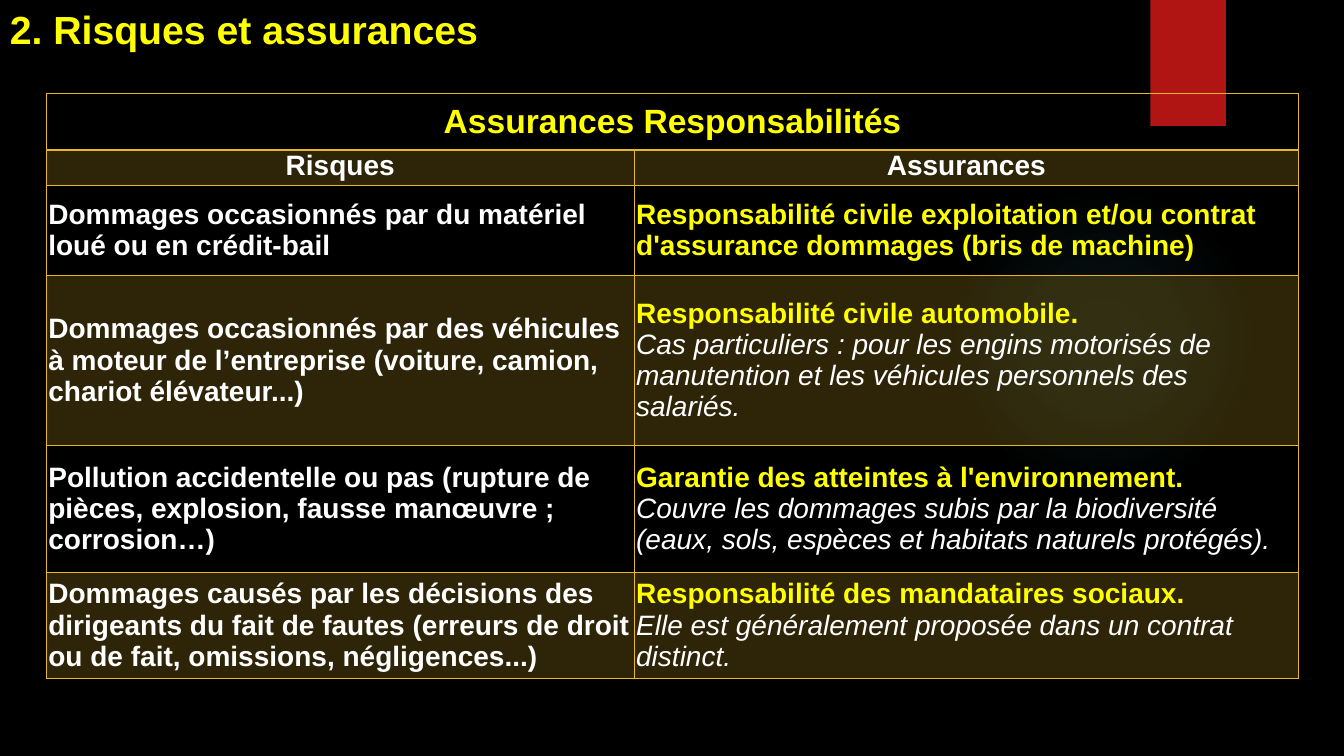
from dataclasses import dataclass

from lxml import etree
from pptx import Presentation
from pptx import util as u
from pptx.dml.color import RGBColor
from pptx.enum import shapes, text
from pptx.oxml import ns


@dataclass(frozen=True)
class Theme:
    font: str = "Arial"
    black: str = "000000"
    white: str = "FFFFFF"
    yellow: str = "FFFF00"
    red: str = "B01513"
    gold: str = "E6B729"
    glow: str = "50B9C1"
    title_size: int = 28
    heading_size: int = 24
    body_size: int = 20
    band_alpha: int = 20


@dataclass(frozen=True)
class Span:
    words: str
    color: str
    size: int
    bold: bool = True
    italic: bool = False


@dataclass(frozen=True)
class Cover:
    risk: str
    insurance: str
    detail: str = ""


THEME = Theme()
COLUMN_WIDTHS = (5.83, 6.59)
ROW_HEIGHTS = (0.56, 0.35, 0.89, 1.69, 1.26, 1.05)
HEADINGS = ("Risques", "Assurances")
COVERS = (
    Cover(
        "Dommages occasionnés par du matériel loué ou en crédit-bail",
        "Responsabilité civile exploitation et/ou contrat d'assurance dommages (bris de machine)",
    ),
    Cover(
        "Dommages occasionnés par des véhicules à moteur de l’entreprise "
        "(voiture, camion, chariot élévateur...)",
        "Responsabilité civile automobile.",
        "Cas particuliers : pour les engins motorisés de manutention "
        "et les véhicules personnels des salariés.",
    ),
    Cover(
        "Pollution accidentelle ou pas (rupture de pièces, explosion, fausse manœuvre ; corrosion…)",
        "Garantie des atteintes à l'environnement.",
        "Couvre les dommages subis par la biodiversité "
        "(eaux, sols, espèces et habitats naturels protégés).",
    ),
    Cover(
        "Dommages causés par les décisions des dirigeants du fait de fautes "
        "(erreurs de droit ou de fait, omissions, négligences...)",
        "Responsabilité des mandataires sociaux.",
        "Elle est généralement proposée dans un contrat distinct.",
    ),
)


def add_color(parent, color: str, alpha: int) -> None:
    element = etree.SubElement(parent, ns.qn("a:srgbClr"), val=color)
    etree.SubElement(element, ns.qn("a:alpha"), val=str(alpha * 1000))


def write(frame, spans: list[Span], align=text.PP_ALIGN.LEFT):
    frame.word_wrap = True
    for index, span in enumerate(spans):
        para = frame.paragraphs[0] if index == 0 else frame.add_paragraph()
        para.alignment = align
        run = para.add_run()
        run.text = span.words
        run.font.name = THEME.font
        run.font.size = u.Pt(span.size)
        run.font.bold = span.bold
        run.font.italic = span.italic
        run.font.color.rgb = RGBColor.from_string(span.color)


def add_plain_shape(page, kind, left: float, top: float, width: float, height: float):
    shape = page.shapes.add_shape(
        kind, u.Inches(left), u.Inches(top), u.Inches(width), u.Inches(height)
    )
    shape.shadow.inherit = False
    shape.line.fill.background()
    return shape


def add_glow(page) -> None:
    glow = add_plain_shape(page, shapes.MSO_SHAPE.OVAL, 9.41, 1.83, 3.08, 3.08)
    glow.fill.background()
    properties = glow.element.spPr
    gradient = etree.Element(ns.qn("a:gradFill"), rotWithShape="1")
    stops = etree.SubElement(gradient, ns.qn("a:gsLst"))
    for position, alpha in ((0, 7), (36, 6), (69, 0)):
        stop = etree.SubElement(stops, ns.qn("a:gs"), pos=str(position * 1000))
        add_color(stop, THEME.glow, alpha)
    circle = etree.SubElement(gradient, ns.qn("a:path"), path="circle")
    etree.SubElement(
        circle, ns.qn("a:fillToRect"), {side: "50000" for side in "ltrb"}
    )
    properties.replace(properties.find(ns.qn("a:noFill")), gradient)


def style_cell(cell, banded: bool, widths: dict[str, int]) -> None:
    cell.margin_left = cell.margin_right = u.Inches(0.02)
    cell.margin_top = cell.margin_bottom = 0
    properties = cell._tc.get_or_add_tcPr()
    for side in "LRTB":
        line = etree.SubElement(
            properties, ns.qn(f"a:ln{side}"), w=str(u.Pt(widths.get(side, 1)))
        )
        fill = etree.SubElement(line, ns.qn("a:solidFill"))
        add_color(fill, THEME.gold, 100)
    if banded:
        fill = etree.SubElement(properties, ns.qn("a:solidFill"))
        add_color(fill, THEME.gold, THEME.band_alpha)
    else:
        cell.fill.background()


def add_cover_table(page) -> None:
    table = page.shapes.add_table(
        len(ROW_HEIGHTS), len(COLUMN_WIDTHS), u.Inches(0.46), u.Inches(0.93),
        u.Inches(sum(COLUMN_WIDTHS)), u.Inches(sum(ROW_HEIGHTS)),
    ).table
    table.first_row = table.horz_banding = False
    for column, width in zip(table.columns, COLUMN_WIDTHS):
        column.width = u.Inches(width)
    for index, (row, height) in enumerate(zip(table.rows, ROW_HEIGHTS)):
        row.height = u.Inches(height)
        for cell in row.cells:
            style_cell(cell, index % 2 == 1, {0: {"B": 2}, 1: {"T": 2}}.get(index, {}))
            if index != 1:
                cell.vertical_anchor = text.MSO_ANCHOR.MIDDLE

    banner = table.cell(0, 0)
    banner.merge(table.cell(0, 1))
    title = Span("Assurances Responsabilités", THEME.yellow, THEME.heading_size)
    write(banner.text_frame, [title], text.PP_ALIGN.CENTER)
    banner.text_frame.paragraphs[0].space_after = u.Pt(3)
    for index, heading in enumerate(HEADINGS):
        span = Span(heading, THEME.white, THEME.body_size)
        write(table.cell(1, index).text_frame, [span], text.PP_ALIGN.CENTER)
    for index, cover in enumerate(COVERS, start=2):
        risk = Span(cover.risk, THEME.white, THEME.body_size)
        answer = [Span(cover.insurance, THEME.yellow, THEME.body_size)]
        if cover.detail:
            answer.append(Span(cover.detail, THEME.white, THEME.body_size, False, True))
        write(table.cell(index, 0).text_frame, [risk])
        write(table.cell(index, 1).text_frame, answer)


def main() -> None:
    deck = Presentation()
    deck.slide_width, deck.slide_height = u.Inches(13.33), u.Inches(7.5)
    page = deck.slides.add_slide(deck.slide_layouts[6])
    page.background.fill.solid()
    page.background.fill.fore_color.rgb = RGBColor.from_string(THEME.black)

    add_glow(page)
    ribbon = add_plain_shape(page, shapes.MSO_SHAPE.RECTANGLE, 11.41, 0, 0.75, 1.25)
    ribbon.fill.solid()
    ribbon.fill.fore_color.rgb = RGBColor.from_string(THEME.red)

    box = page.shapes.add_textbox(0, 0, u.Inches(6.39), u.Inches(0.57))
    write(box.text_frame, [Span("2. Risques et assurances", THEME.yellow, THEME.title_size)])
    box.text_frame.auto_size = text.MSO_AUTO_SIZE.SHAPE_TO_FIT_TEXT
    add_cover_table(page)
    deck.save("out.pptx")


if __name__ == "__main__":
    main()
